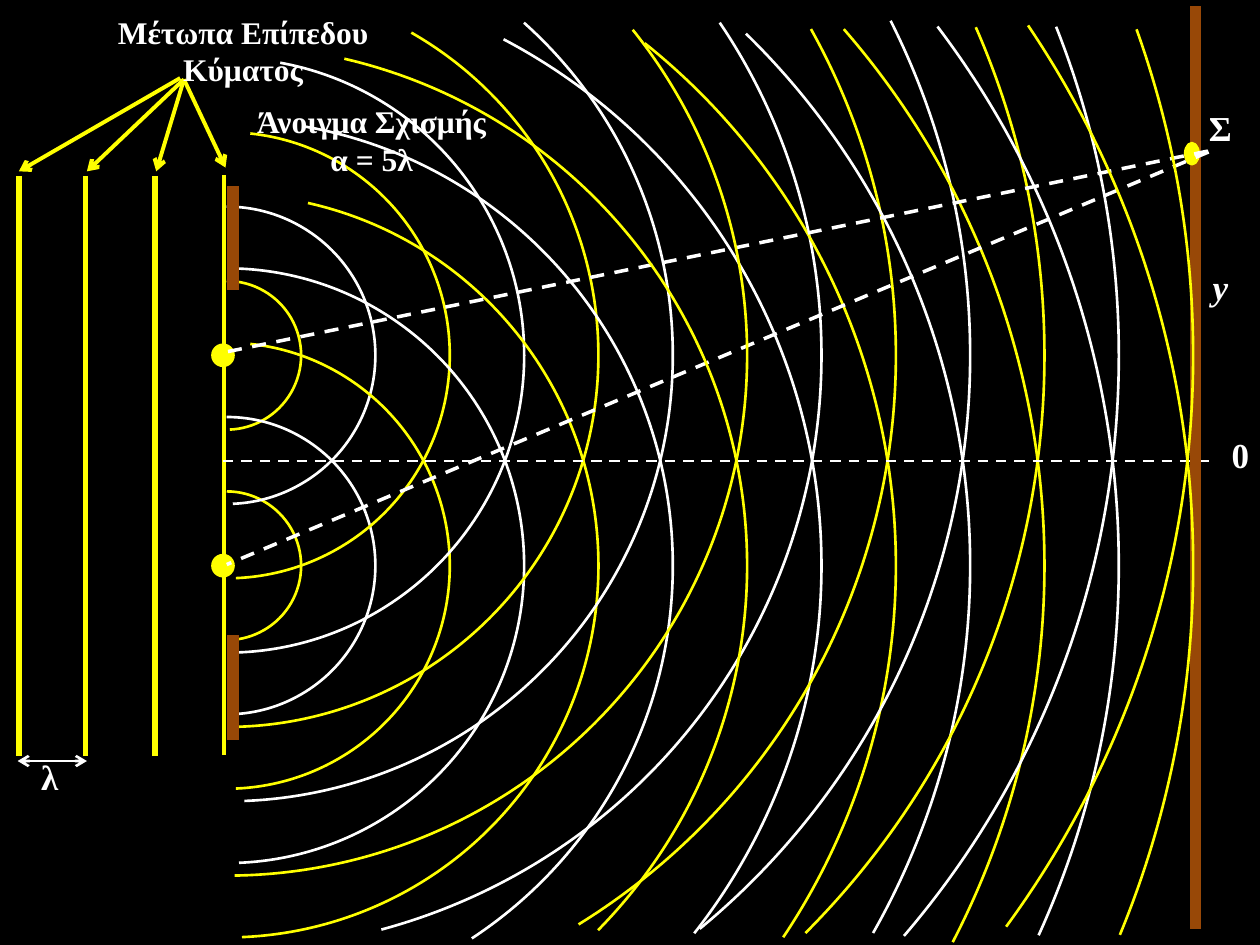
from dataclasses import dataclass

from lxml import etree
from pptx import Presentation
from pptx.dml.color import RGBColor
from pptx.enum import dml, shapes, text
from pptx.oxml.ns import qn
from pptx.util import Inches, Pt


@dataclass(frozen=True)
class Theme:
    back: RGBColor = RGBColor(0x00, 0x00, 0x00)
    crest: RGBColor = RGBColor(0xFF, 0xFF, 0x00)
    trough: RGBColor = RGBColor(0xFF, 0xFF, 0xFF)
    wall: RGBColor = RGBColor(0x98, 0x48, 0x07)
    font: str = "Times New Roman"
    caption: int = 18
    symbol: int = 20


THEME = Theme()
WAVELENGTH = 1.18
SOURCE_X = 1.8
SOURCE_YS = (2.82, 4.49)

ARC_ANGLES = {
    1: ((270, 87.65), (270, 87.65)),
    2: ((270, 87.65), (270, 87.65)),
    3: ((276.07, 87.65), (276.07, 87.65)),
    4: ((280.35, 89.63), (270.89, 87.65)),
    5: ((299.78, 89.68), (282.62, 87.65)),
    6: ((311.79, 87.73), (280.15, 56.68)),
    7: ((321.28, 89.13), (283.06, 44.47)),
    8: ((325.99, 74.93), (297.74, 38.18)),
    9: ((330.82, 58.28), (308.65, 33.73)),
    10: ((333.26, 50.49), (314.3, 29.61)),
    11: ((336.35, 44.96), (318.99, 27.41)),
    12: ((338.39, 40.61), (322.82, 24.48)),
    13: ((340.29, 36.25), (326.01, 22.46)),
}
FRONT_ARCS = (7, 13)


def set_line(line, color, width, dashed=False):
    line.color.rgb = color
    line.width = Pt(width)
    if dashed:
        line.dash_style = dml.MSO_LINE.DASH


def add_wave(s, n):
    color = THEME.crest if n % 2 else THEME.trough
    size = n * WAVELENGTH
    for y, angles in zip(SOURCE_YS, ARC_ANGLES[n]):
        sp = s.shapes.add_shape(
            shapes.MSO_SHAPE.ARC, Inches(SOURCE_X - size / 2),
            Inches(y - size / 2), Inches(size), Inches(size))
        sp.shadow.inherit = False
        sp.fill.background()
        set_line(sp.line, color, 1.5)
        for i, angle in enumerate(angles):
            sp.adjustments[i] = angle * 0.6


def add_line(s, start, end, color, width, dashed=False, arrows=()):
    cx = s.shapes.add_connector(
        shapes.MSO_CONNECTOR.STRAIGHT, *map(Inches, start + end))
    set_line(cx.line, color, width, dashed)
    ln = cx.line._get_or_add_ln()
    for tag in arrows:
        etree.SubElement(ln, qn(tag), type="arrow")
    etree.SubElement(cx._element.spPr, qn("a:effectLst"))


def add_label(s, box, lines, size, italic=False):
    sp = s.shapes.add_textbox(*map(Inches, box))
    tf = sp.text_frame
    tf.word_wrap = True
    tf.auto_size = text.MSO_AUTO_SIZE.SHAPE_TO_FIT_TEXT
    tf.text = "\n".join(lines)
    for p in tf.paragraphs:
        p.alignment = text.PP_ALIGN.CENTER
        p.font.name = THEME.font
        p.font.size = Pt(size)
        p.font.bold = True
        if italic:
            p.font.italic = True
        p.font.color.rgb = THEME.trough


def add_dot(s, x, y, width, height):
    sp = s.shapes.add_shape(
        shapes.MSO_SHAPE.OVAL, Inches(x - width / 2), Inches(y - height / 2),
        Inches(width), Inches(height))
    sp.shadow.inherit = False
    sp.fill.solid()
    sp.fill.fore_color.rgb = THEME.crest
    set_line(sp.line, THEME.crest, 2)


def add_rays(s, points):
    start, *rest = [tuple(map(Inches, point)) for point in points]
    builder = s.shapes.build_freeform(*start)
    builder.add_line_segments(rest, close=False)
    sp = builder.convert_to_shape()
    sp.shadow.inherit = False
    sp.fill.background()
    set_line(sp.line, THEME.trough, 2, dashed=True)


def add_slit(s):
    for top, bottom in ((1.48, 2.3), (5.04, 5.87)):
        add_line(s, (1.85, top), (1.85, bottom), THEME.wall, 7.25)
    add_line(s, (1.78, 1.39), (1.78, 5.99), THEME.crest, 2.25)
    add_line(s, (1.77, 3.66), (9.61, 3.66), THEME.trough, 1.5, dashed=True)
    add_label(s, (9.65, 3.39, 0.39, 0.44), ["0"], THEME.symbol)
    add_label(s, (1.85, 0.76, 2.2, 0.71),
              ["Άνοιγμα Σχισμής", "α = 5λ"], THEME.caption)
    add_line(s, (9.49, 0.05), (9.49, 7.37), THEME.wall, 6)


def add_plane_wave(s):
    add_line(s, (0.14, 6.04), (0.69, 6.04), THEME.trough, 1.5,
             arrows=("a:headEnd", "a:tailEnd"))
    add_label(s, (0.2, 5.95, 0.39, 0.44), ["λ"], THEME.symbol)
    for x in (1.23, 0.68, 0.15):
        add_line(s, (x, 1.4), (x, 6), THEME.crest, 3)
    for start, end in (((1.43, 0.62), (0.15, 1.36)),
                       ((1.46, 0.63), (1.24, 1.36)),
                       ((1.46, 0.63), (1.79, 1.33)),
                       ((1.46, 0.63), (0.69, 1.36))):
        add_line(s, start, end, THEME.crest, 2.25, arrows=("a:tailEnd",))
    add_label(s, (0.83, 0.05, 2.2, 0.71),
              ["Μέτωπα Επίπεδου Κύματος"], THEME.caption)


def add_points(s):
    add_label(s, (9.49, 2.06, 0.39, 0.44), ["y"], THEME.symbol, italic=True)
    add_label(s, (9.49, 0.8, 0.39, 0.44), ["Σ"], THEME.symbol)
    add_dot(s, 9.46, 1.22, 0.1, 0.16)
    for y in SOURCE_YS:
        add_dot(s, 1.77, y, 0.16, 0.16)


def main():
    prs = Presentation()
    prs.slide_width, prs.slide_height = Inches(10), Inches(7.5)
    s = prs.slides.add_slide(prs.slide_layouts[6])
    s.background.fill.solid()
    s.background.fill.fore_color.rgb = THEME.back
    for n in ARC_ANGLES:
        if n not in FRONT_ARCS:
            add_wave(s, n)
    add_slit(s)
    add_plane_wave(s)
    add_points(s)
    add_rays(s, [(1.81, 2.79), (9.63, 1.19), (1.8, 4.48)])
    for n in FRONT_ARCS:
        add_wave(s, n)
    prs.save("out.pptx")


if __name__ == "__main__":
    main()
